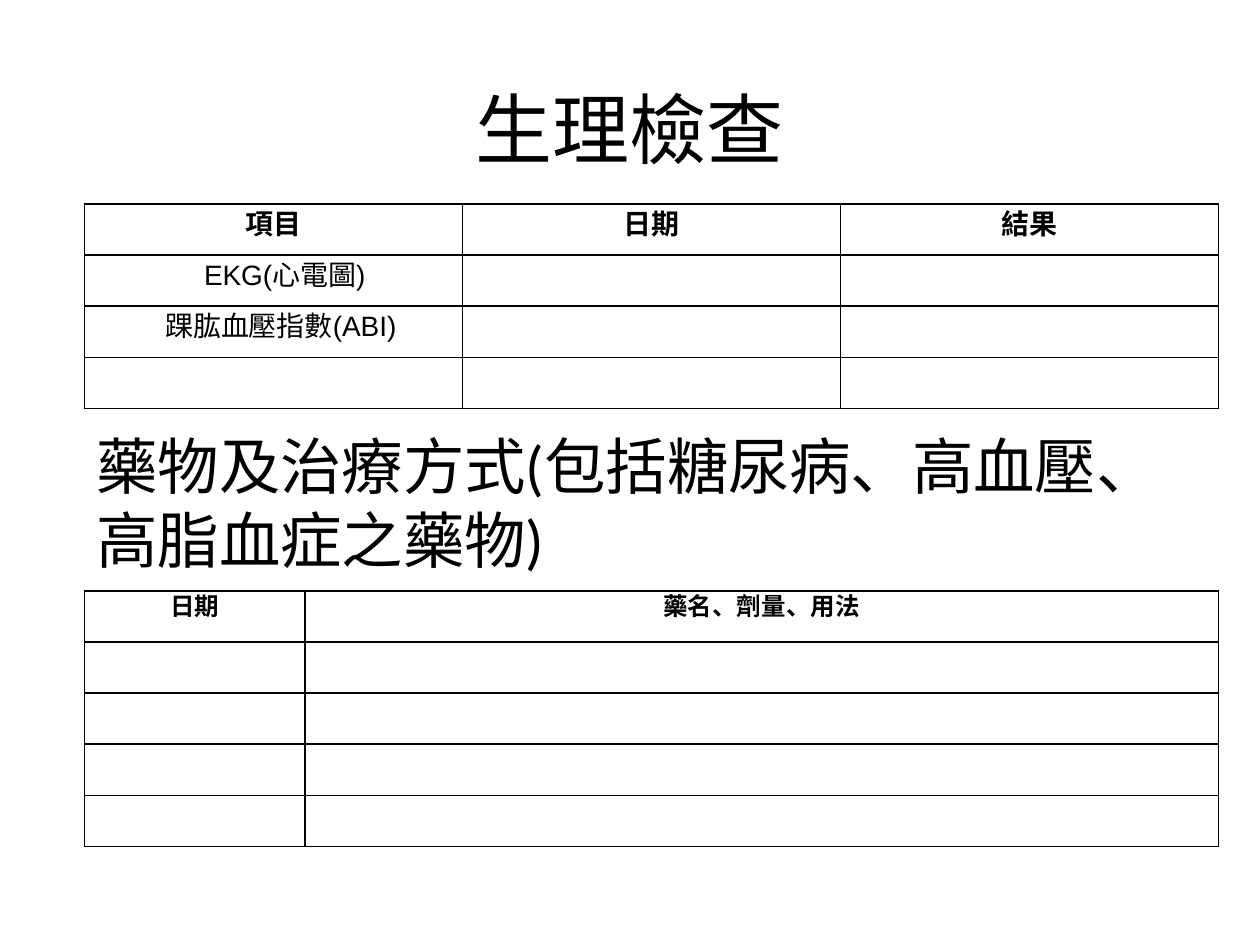
from dataclasses import dataclass

from lxml import etree
from pptx import Presentation
from pptx.dml.color import RGBColor
from pptx.enum import text as t
from pptx.oxml.ns import qn
from pptx.util import Pt


@dataclass(frozen=True)
class Theme:
    ink: str = "000000"
    head: str = "Calibri"
    body: str = "Arial"
    title: float = 44
    sub: float = 35.1
    line: float = 1
    row: float = 29.2
    left: float = 48.2
    width: float = 648


@dataclass(frozen=True)
class Grid:
    top: float
    cols: tuple[float, ...]
    rows: int
    heads: tuple[str, ...]
    items: tuple[str, ...]
    size: float
    lead: float
    anchor: t.MSO_ANCHOR


THEME = Theme()
EXAMS = Grid(116.6, (216, 216, 216), 4, ("項目", "日期", "結果"),
             ("EKG(心電圖)", "踝肱血壓指數(ABI) "), 16, 15, t.MSO_ANCHOR.MIDDLE)
DRUGS = Grid(337.7, (126, 522), 5, ("日期", "藥名、劑量、用法"),
             (), 14, 18, t.MSO_ANCHOR.TOP)


def style(para, face: str, size: float, bold: bool = False) -> None:
    para.font.name = face
    para.font.size = Pt(size)
    para.font.bold = bold
    para.font.color.rgb = RGBColor.from_string(THEME.ink)


def border(cell) -> None:
    props = cell._tc.get_or_add_tcPr()
    for pos, side in enumerate(("lnL", "lnR", "lnT", "lnB")):
        line = etree.Element(qn(f"a:{side}"), w=str(Pt(THEME.line)))
        fill = etree.SubElement(line, qn("a:solidFill"))
        etree.SubElement(fill, qn("a:srgbClr"), val=THEME.ink)
        props.insert(pos, line)


def write(cell, words: str, grid: Grid, bold: bool, indent: float = 0) -> None:
    cell.text = words
    cell.vertical_anchor = grid.anchor
    cell.margin_left = cell.margin_right = Pt(1.4)
    cell.margin_top = cell.margin_bottom = 0
    para = cell.text_frame.paragraphs[0]
    para.alignment = t.PP_ALIGN.CENTER
    para.line_spacing = Pt(grid.lead)
    if indent:
        para._p.get_or_add_pPr().set("indent", str(Pt(indent)))
    style(para, THEME.body, grid.size, bold)


def draw(slide, grid: Grid) -> None:
    frame = slide.shapes.add_table(
        grid.rows, len(grid.cols), Pt(THEME.left), Pt(grid.top),
        Pt(THEME.width), Pt(THEME.row * grid.rows))
    table = frame.table
    table.first_row = table.horz_banding = False
    for col, width in zip(table.columns, grid.cols):
        col.width = Pt(width)
    for row in table.rows:
        row.height = Pt(THEME.row)
    for cell in table.iter_cells():
        cell.fill.background()
        border(cell)
    for col, words in enumerate(grid.heads):
        write(table.cell(0, col), words, grid, True)
    for row, words in enumerate(grid.items, 1):
        write(table.cell(row, 0), words, grid, False, 13)


def label(shape, words: str, size: float, align: t.PP_ALIGN) -> None:
    frame = shape.text_frame
    frame.text = words
    frame.word_wrap = True
    frame.auto_size = t.MSO_AUTO_SIZE.NONE
    frame.vertical_anchor = t.MSO_ANCHOR.MIDDLE
    para = frame.paragraphs[0]
    para.alignment = align
    style(para, THEME.head, size)


def main() -> None:
    deck = Presentation()
    deck.slide_width, deck.slide_height = Pt(720), Pt(540)
    slide = deck.slides.add_slide(deck.slide_layouts[5])
    title = slide.shapes.title
    title.left, title.top = Pt(36), Pt(28)
    title.width, title.height = Pt(THEME.width), Pt(90)
    label(title, "生理檢查", THEME.title, t.PP_ALIGN.CENTER)
    draw(slide, EXAMS)
    sub = slide.shapes.add_textbox(
        Pt(THEME.left), Pt(242), Pt(THEME.width), Pt(90))
    label(sub, "藥物及治療方式(包括糖尿病、高血壓、高脂血症之藥物)",
          THEME.sub, t.PP_ALIGN.LEFT)
    draw(slide, DRUGS)
    deck.save("out.pptx")


if __name__ == "__main__":
    main()
